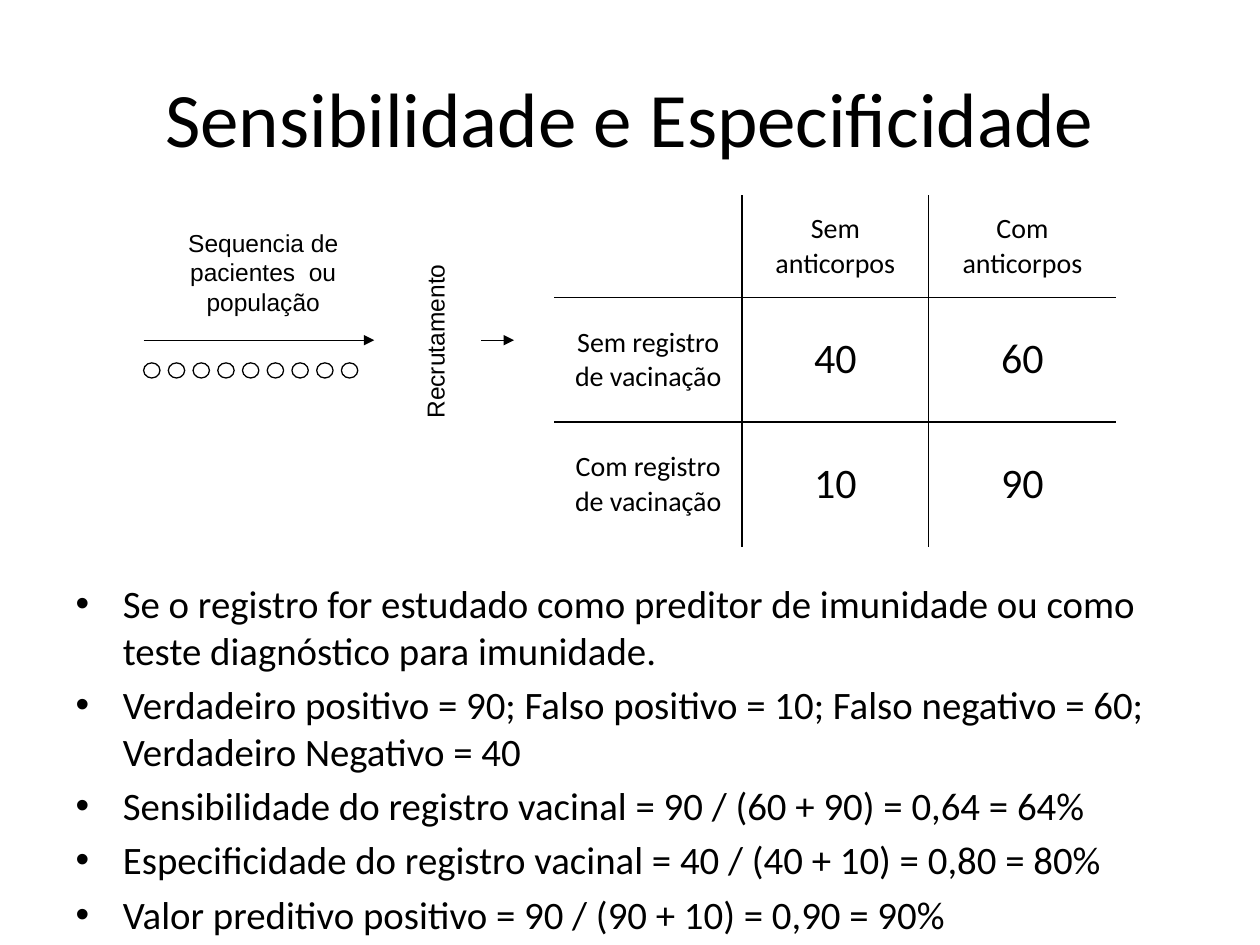
from dataclasses import dataclass

from pptx import Presentation
from pptx.dml.color import RGBColor
from pptx.enum.shapes import MSO_CONNECTOR, MSO_SHAPE
from pptx.enum.text import MSO_ANCHOR, MSO_AUTO_SIZE, PP_ALIGN
from pptx.oxml.ns import qn
from pptx.util import Inches, Pt
from lxml.etree import SubElement


@dataclass(frozen=True)
class Theme:
    ink: RGBColor = RGBColor(0, 0, 0)
    paper: RGBColor = RGBColor(255, 255, 255)
    main_font: str = "Calibri"
    label_font: str = "Arial"
    title: float = 44
    body: float = 22.2
    label: float = 14
    heading: float = 16
    count: float = 24
    thin: float = 0.75
    rule: float = 1


THEME = Theme()

BULLETS = [
    "Se o registro for estudado como preditor de imunidade ou como teste diagnóstico para imunidade.",
    "Verdadeiro positivo = 90; Falso positivo = 10; Falso negativo = 60; Verdadeiro Negativo = 40",
    "Sensibilidade do registro vacinal = 90 / (60 + 90) = 0,64 = 64%",
    "Especificidade do registro vacinal = 40 / (40 + 10) = 0,80 = 80%",
    "Valor preditivo positivo = 90 / (90 + 10) = 0,90 = 90%",
]
COUNTS = [
    ["", "Sem anticorpos", "Com anticorpos"],
    ["Sem registro de vacinação", "40", "60"],
    ["Com registro de vacinação", "10", "90"],
]


def apply(target, values):
    for name, value in values.items():
        setattr(target, name, value)


def place(sp, left, top, width, height):
    apply(sp, {"left": Inches(left), "top": Inches(top),
               "width": Inches(width), "height": Inches(height)})


def write(p, text, size, font=THEME.main_font, align=None):
    r = p.add_run()
    r.text = text
    apply(r.font, {"name": font, "size": Pt(size)})
    r.font.color.rgb = THEME.ink
    if align is not None:
        p.alignment = align


def fill_title(sp, text):
    place(sp, 0.5, 0.3, 9, 1.25)
    tf = sp.text_frame
    apply(tf, {"vertical_anchor": MSO_ANCHOR.MIDDLE, "auto_size": MSO_AUTO_SIZE.NONE})
    write(tf.paragraphs[0], text, THEME.title, align=PP_ALIGN.CENTER)


def fill_bullets(sp, items):
    place(sp, 0.5, 4.55, 9, 2.58)
    tf = sp.text_frame
    tf.auto_size = MSO_AUTO_SIZE.NONE
    for i, item in enumerate(items):
        p = tf.add_paragraph() if i else tf.paragraphs[0]
        p.space_before = Pt(0.2 * THEME.body if i else 0)
        write(p, item, THEME.body)


def add_label(s, text, box, rotation=0):
    sp = s.shapes.add_textbox(*map(Inches, box))
    sp.rotation = rotation
    sp.text_frame.word_wrap = True
    write(sp.text_frame.paragraphs[0], text, THEME.label, THEME.label_font, PP_ALIGN.CENTER)


def add_arrow(s, start, end, y):
    line = s.shapes.add_connector(MSO_CONNECTOR.STRAIGHT, Inches(start), Inches(y),
                                  Inches(end), Inches(y))
    line.line.width = Pt(THEME.thin)
    line.line.color.rgb = THEME.ink
    SubElement(line.line._get_or_add_ln(), qn("a:tailEnd"), type="triangle")
    SubElement(line._element.spPr, qn("a:effectLst"))


def add_patient(s, left):
    sp = s.shapes.add_shape(MSO_SHAPE.OVAL, Inches(left), Inches(2.88),
                            Inches(0.13), Inches(0.12))
    sp.shadow.inherit = False
    sp.fill.background()
    sp.line.width = Pt(THEME.thin)
    sp.line.color.rgb = THEME.ink


def set_borders(cell, edges):
    tcPr = cell._tc.get_or_add_tcPr()
    for edge, shown in edges.items():
        ln = SubElement(tcPr, qn(f"a:ln{edge}"), w=str(Pt(THEME.rule)))
        if shown:
            fill = SubElement(ln, qn("a:solidFill"))
            SubElement(fill, qn("a:srgbClr"), val=str(THEME.ink))
        else:
            SubElement(ln, qn("a:noFill"))


def add_counts(s, rows):
    table = s.shapes.add_table(3, 3, Inches(4.4), Inches(1.55),
                               Inches(4.46), Inches(2.8)).table
    apply(table, {"first_row": False, "horz_banding": False})
    for col, width in zip(table.columns, (1.49, 1.48, 1.49)):
        col.width = Inches(width)
    for row, height in zip(table.rows, (0.81, 0.99, 0.99)):
        row.height = Inches(height)
    for i, texts in enumerate(rows):
        for j, text in enumerate(texts):
            cell = table.cell(i, j)
            is_count = i > 0 and j > 0
            # Only the inner grid lines are drawn
            set_borders(cell, {"L": j > 0, "R": j < 2, "T": i > 0, "B": i < 2})
            if is_count:
                cell.fill.solid()
                cell.fill.fore_color.rgb = THEME.paper
            else:
                cell.fill.background()
            cell.vertical_anchor = MSO_ANCHOR.MIDDLE
            if text:
                write(cell.text_frame.paragraphs[0], text,
                      THEME.count if is_count else THEME.heading, align=PP_ALIGN.CENTER)


def main():
    prs = Presentation()
    apply(prs, {"slide_width": Inches(10), "slide_height": Inches(7.5)})
    s = prs.slides.add_slide(prs.slide_layouts[1])

    # Title and conclusions
    fill_title(s.shapes.title, "Sensibilidade e Especificidade")
    fill_bullets(s.placeholders[1], BULLETS)

    # Recruitment flow
    add_arrow(s, 1.14, 2.97, 2.7)
    add_label(s, "Sequencia de pacientes  ou população", (1.21, 1.76, 1.76, 0.79))
    add_label(s, "Recrutamento", (2.68, 2.54, 1.55, 0.34), rotation=270)
    patients = 9
    gap = (2.71 - 1.14) / (patients - 1)
    for i in range(patients):
        add_patient(s, 1.14 + i * gap)
    add_arrow(s, 3.82, 4.08, 2.7)

    # Two-by-two table
    add_counts(s, COUNTS)
    prs.save("out.pptx")


if __name__ == "__main__":
    main()
